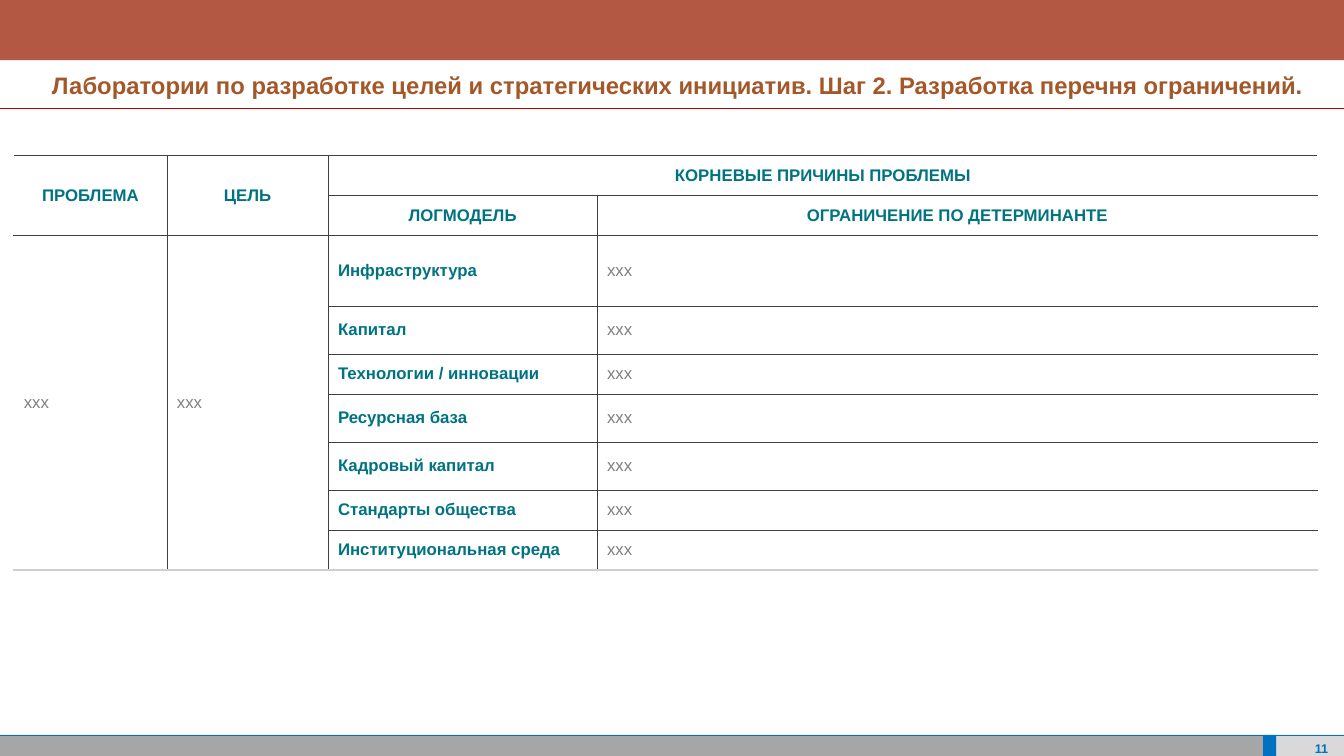
import pptx
import pptx.util
import pptx.dml.color
import pptx.enum.shapes
import pptx.enum.text
import pptx.oxml.ns
import lxml.etree

Cm, Pt = pptx.util.Cm, pptx.util.Pt
ALIGN = pptx.enum.text.PP_ALIGN
MIDDLE = pptx.enum.text.MSO_ANCHOR.MIDDLE

WIDTH, HEIGHT = 33.87, 19.05
FOOTER_TOP = 18.52
TITLE_TOP, TITLE_HEIGHT = 1.52, 1.2
TITLE = ("Лаборатории по разработке целей и стратегических инициатив. "
         "Шаг 2. Разработка перечня ограничений.")
DETERMINANTS = ["Инфраструктура", "Капитал", "Технологии / инновации",
                "Ресурсная база", "Кадровый капитал", "Стандарты общества",
                "Институциональная среда"]
BLANK = "ххх"
COLUMNS = [3.86, 4.06, 6.78, 18.16]
ROWS = [0.98, 0.98, 1.78, 1.21, 0.98, 1.21, 1.21, 0.98, 0.98]
LAST_ROW, LAST_COLUMN = len(ROWS) - 1, len(COLUMNS) - 1
MERGES = [(0, 0, 1, 0), (0, 1, 1, 1), (0, 2, 0, 3),
          (2, 0, LAST_ROW, 0), (2, 1, LAST_ROW, 1)]
TEAL, GRAY, DARK, SILVER, WHITE = "007382", "808080", "404040", "D0CECE", "FFFFFF"
BLUE = "0070C0"


def rgb(value):
    return pptx.dml.color.RGBColor.from_string(value)


def sub(parent, tag, **attrs):
    return lxml.etree.SubElement(parent, pptx.oxml.ns.qn(tag), **attrs)


class Deck:
    font = "Arial"

    def __init__(self):
        self.prs = pptx.Presentation()
        self.prs.slide_width = Cm(WIDTH)
        self.prs.slide_height = Cm(HEIGHT)
        self.s = self.prs.slides.add_slide(self.prs.slide_layouts[6])

    def bar(self, x, y, w, h, color):
        sp = self.s.shapes.add_shape(pptx.enum.shapes.MSO_SHAPE.RECTANGLE,
                                     Cm(x), Cm(y), Cm(w), Cm(h))
        sp.shadow.inherit = False
        sp.fill.solid()
        sp.fill.fore_color.rgb = rgb(color)
        sp.line.fill.background()

    def rule(self, y, color):
        ln = self.s.shapes.add_connector(pptx.enum.shapes.MSO_CONNECTOR.STRAIGHT,
                                         0, Cm(y), Cm(WIDTH), Cm(y))
        ln.line.color.rgb = rgb(color)
        ln.line.width = Pt(0.5)
        sub(ln._element.spPr, "a:effectLst")

    def paragraph(self, tf, text, size, color, bold, align):
        p = tf.paragraphs[0]
        p.text = text
        p.alignment = align
        for r in p.runs:
            r.font.name = self.font
            r.font.size = Pt(size)
            r.font.bold = bold
            r.font.color.rgb = rgb(color)
        return p

    def text(self, box, margins, text, size, color, align, anchor=None):
        tf = self.s.shapes.add_textbox(*map(Cm, box)).text_frame
        tf.word_wrap = True
        tf.margin_left, tf.margin_top, tf.margin_right, tf.margin_bottom = map(Cm, margins)
        tf.vertical_anchor = anchor
        p = self.paragraph(tf, text, size, color, True, align)
        p.line_spacing = 1.2
        p.space_after = Pt(8)

    def borders(self, cell, edges):
        tcPr = cell._tc.get_or_add_tcPr()
        for side, color in edges:
            width = Pt(0.5 if color == DARK else 1)
            ln = sub(tcPr, "a:ln" + side, w=str(width))
            sub(sub(ln, "a:solidFill"), "a:srgbClr", val=color)

    def table(self, x, y, columns, rows, merges, texts):
        tbl = self.s.shapes.add_table(len(rows), len(columns), Cm(x), Cm(y),
                                      Cm(sum(columns)), Cm(sum(rows))).table
        tbl.first_row = tbl.horz_banding = False
        for column, w in zip(tbl.columns, columns):
            column.width = Cm(w)
        for row, h in zip(tbl.rows, rows):
            row.height = Cm(h)
        for top, left, bottom, right in merges:
            tbl.cell(top, left).merge(tbl.cell(bottom, right))
        for i in range(len(rows)):
            for j in range(len(columns)):
                cell = tbl.cell(i, j)
                at_right = j == LAST_COLUMN or (i, j) == (0, 2)
                at_bottom = i == LAST_ROW or (i >= 2 and j < 2)
                self.borders(cell, [("L", DARK if j else WHITE),
                                    ("R", WHITE if at_right else DARK),
                                    ("T", DARK),
                                    ("B", SILVER if at_bottom else DARK)])
                cell.fill.solid()
                cell.fill.fore_color.rgb = rgb(WHITE)
                cell.vertical_anchor = MIDDLE
                cell.margin_left = cell.margin_right = Cm(0.25)
                cell.margin_top = cell.margin_bottom = Cm(0.25)
                if (i, j) in texts:
                    text = texts[i, j]
                    blank = text == BLANK
                    self.paragraph(cell.text_frame, text, 12, GRAY if blank else TEAL,
                                   not blank, ALIGN.CENTER if i < 2 else ALIGN.LEFT)


def main():
    d = Deck()
    footer_height = HEIGHT - FOOTER_TOP
    d.bar(0, FOOTER_TOP, 31.83, footer_height, "A6A6A6")
    d.bar(32.16, FOOTER_TOP, 1.71, footer_height, "D9D9D9")
    d.text((32.4, 18.59, 1.47, 0.41), (0.3, 0, 0.4, 0), "11", 9, BLUE, ALIGN.RIGHT)
    d.bar(31.83, FOOTER_TOP, 0.33, footer_height, BLUE)
    d.rule(FOOTER_TOP, BLUE)
    d.bar(0, TITLE_TOP, WIDTH, TITLE_HEIGHT, WHITE)
    d.bar(0, 0, WIDTH, TITLE_TOP, "B25843")
    d.rule(TITLE_TOP + TITLE_HEIGHT, "C00000")
    d.text((0.71, TITLE_TOP, 33.15, TITLE_HEIGHT), (0.6, 0.1, 0.4, 0.2),
           TITLE, 17, "A45829", ALIGN.JUSTIFY, MIDDLE)

    texts = {(0, 0): "ПРОБЛЕМА", (0, 1): "ЦЕЛЬ", (0, 2): "КОРНЕВЫЕ ПРИЧИНЫ ПРОБЛЕМЫ",
             (1, 2): "ЛОГМОДЕЛЬ", (1, 3): "ОГРАНИЧЕНИЕ ПО ДЕТЕРМИНАНТЕ",
             (2, 0): BLANK, (2, 1): BLANK}
    for i, name in enumerate(DETERMINANTS, 2):
        texts[i, 2] = name
        texts[i, 3] = BLANK
    d.table(0.35, 3.91, COLUMNS, ROWS, MERGES, texts)
    d.prs.save("out.pptx")


if __name__ == "__main__":
    main()
